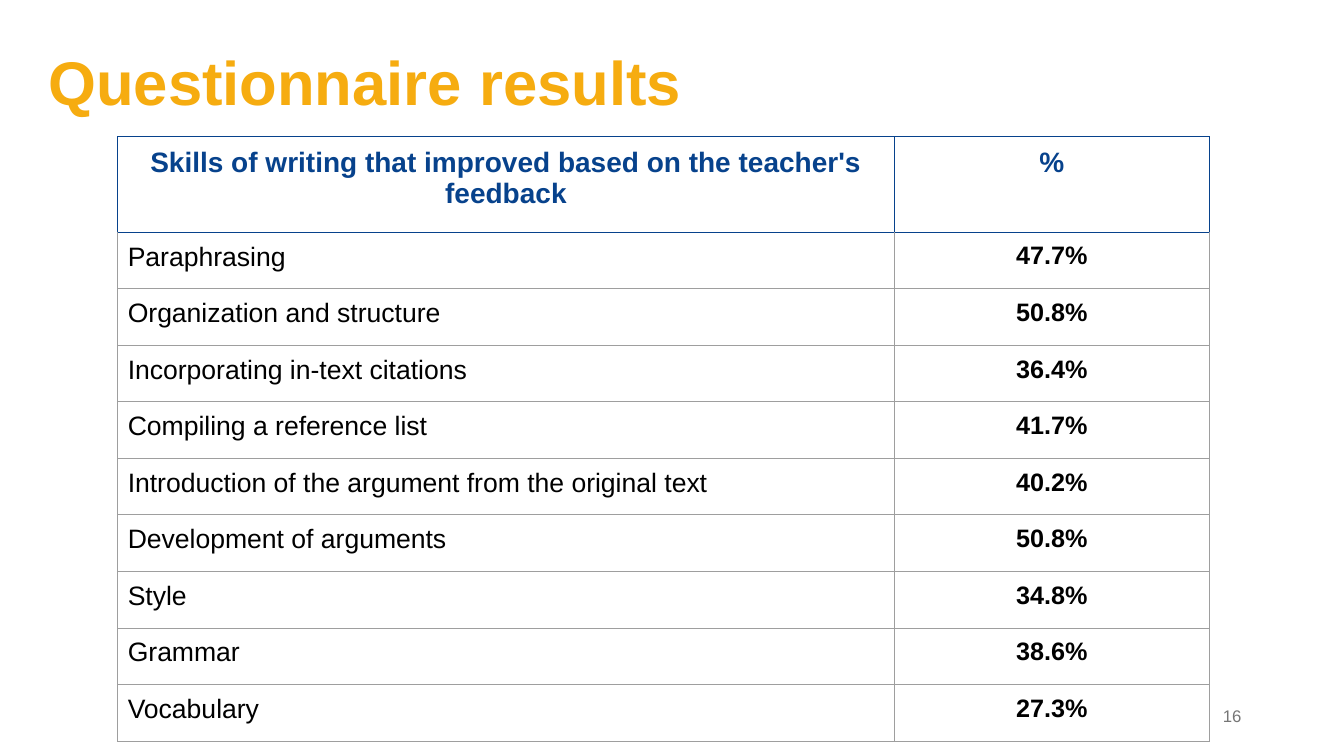
"""Build the questionnaire results slide with its table of writing skills."""
import pptx
import pptx.dml.color
import pptx.enum.text
import pptx.oxml
import pptx.oxml.ns
import pptx.util

Cm = pptx.util.Cm
Pt = pptx.util.Pt
RGBColor = pptx.dml.color.RGBColor
ALIGN = pptx.enum.text.PP_ALIGN
ANCHOR = pptx.enum.text.MSO_ANCHOR

TITLE = "Questionnaire results"
PAGE = "16"
HEADS = ("Skills of writing that improved based on the teacher's feedback", "%")
SKILLS = [
    ("Paraphrasing", "47.7%"),
    ("Organization and structure", "50.8%"),
    ("Incorporating in-text citations", "36.4%"),
    ("Compiling a reference list", "41.7%"),
    ("Introduction of the argument from the original text", "40.2%"),
    ("Development of arguments", "50.8%"),
    ("Style", "34.8%"),
    ("Grammar", "38.6%"),
    ("Vocabulary", "27.3%"),
]

FONT = "Arial"
GOLD = RGBColor(0xF6, 0xAC, 0x10)
BLUE = RGBColor(0x07, 0x42, 0x8C)
BLACK = RGBColor(0x00, 0x00, 0x00)
WHITE = RGBColor(0xFF, 0xFF, 0xFF)
GRAY = RGBColor(0x76, 0x76, 0x76)
RULE = RGBColor(0x9E, 0x9E, 0x9E)

LEFT, TOP = 2.97, 3.45
COLS = (19.56, 7.95)
HEAD_H, ROW_H = 2.4, 1.425
PAD = Cm(0.25)


def write(frame, text, size, color, bold=False, align=ALIGN.LEFT, space=None):
    para = frame.paragraphs[0]
    para.alignment = align
    para.line_spacing = space
    run = para.add_run()
    run.text = text
    font = run.font
    font.name, font.size, font.bold = FONT, Pt(size), bold
    font.color.rgb = color


def add_box(slide, place, pad, anchor):
    box = slide.shapes.add_textbox(*map(Cm, place))
    frame = box.text_frame
    frame.word_wrap = True
    frame.vertical_anchor = anchor
    frame.margin_left = frame.margin_right = PAD
    frame.margin_top = frame.margin_bottom = pad
    return box


def edge(cell, **sides):
    props = cell._tc.get_or_add_tcPr()
    for side, color in sides.items():
        props.append(pptx.oxml.parse_xml(
            f'<a:ln{side} {pptx.oxml.ns.nsdecls("a")} w="{Pt(0.75)}">'
            f'<a:solidFill><a:srgbClr val="{color}"/></a:solidFill>'
            f'<a:prstDash val="solid"/></a:ln{side}>'))


def add_grid(slide):
    rows = [HEADS] + SKILLS
    high = HEAD_H + ROW_H * len(SKILLS)
    grid = slide.shapes.add_table(
        len(rows), len(COLS), Cm(LEFT), Cm(TOP), Cm(sum(COLS)), Cm(high)).table
    grid.first_row = grid.horz_banding = False
    for col, wide in zip(grid.columns, COLS):
        col.width = Cm(wide)
    for r, row in enumerate(rows):
        grid.rows[r].height = Cm(ROW_H if r else HEAD_H)
        line = RULE if r else BLUE
        for c, text in enumerate(row):
            cell = grid.cell(r, c)
            edge(cell, L=line, R=line, T=RULE if r > 1 else BLUE, B=line)
            cell.fill.solid()
            cell.fill.fore_color.rgb = WHITE
            cell.margin_left = cell.margin_right = PAD
            cell.margin_top = cell.margin_bottom = PAD
            label = r > 0 and c == 0
            size = 20 if r == 0 else 19 if label else 18
            write(cell.text_frame, text, size=size, color=BLACK if r else BLUE,
                  bold=not label, align=ALIGN.LEFT if label else ALIGN.CENTER)


def main():
    deck = pptx.Presentation()
    deck.slide_width, deck.slide_height = Cm(33.87), Cm(19.05)
    slide = deck.slides.add_slide(deck.slide_layouts[6])
    title = add_box(slide, (0.97, 0.86, 30.3, 2.39), PAD, ANCHOR.BOTTOM)
    title.fill.solid()
    title.fill.fore_color.rgb = WHITE
    write(title.text_frame, TITLE, size=44, color=GOLD, bold=True, space=0.9)
    page = add_box(slide, (25.88, 17.65, 5.66, 1.02), Cm(0.13), ANCHOR.TOP)
    write(page.text_frame, PAGE, size=12, color=GRAY, align=ALIGN.RIGHT)
    add_grid(slide)
    deck.save("out.pptx")


if __name__ == "__main__":
    main()
